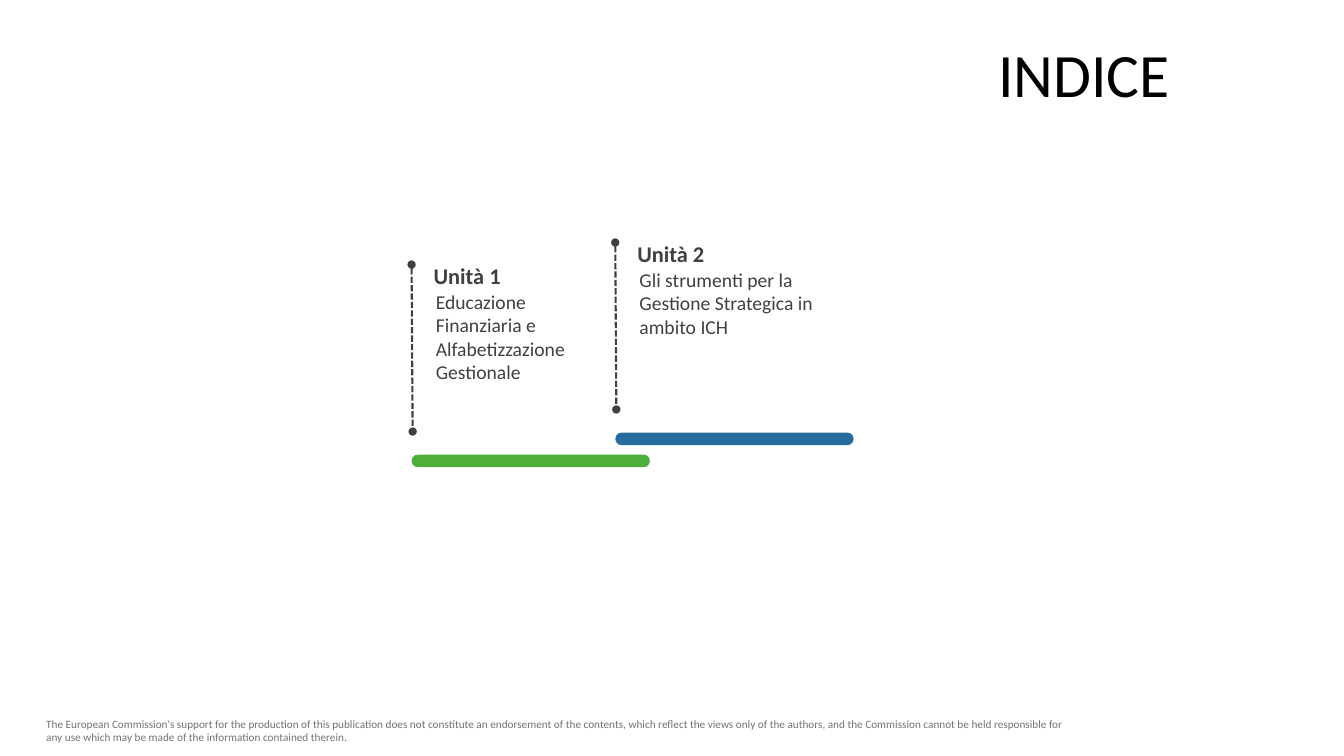
from pptx import Presentation
from pptx.dml.color import RGBColor
from pptx.enum.shapes import MSO_CONNECTOR as CONNECTOR, MSO_SHAPE as SHAPE
from pptx.enum.text import MSO_ANCHOR as ANCHOR, PP_ALIGN as ALIGN
from pptx.oxml.ns import qn
from pptx.util import Emu, Pt
from lxml.etree import SubElement

PX = 9525  # EMU per px, 96 px to the inch
FONT = "Calibri"
DARK = "404040"
UNIT_STEP = (194, -21)  # each unit sits to the right of and above the last

# heading, description, bar colour, description width
UNITS = [
    ("Unità 1", "Educazione Finanziaria e Alfabetizzazione Gestionale", "4EAE3A", 181),
    ("Unità 2", "Gli strumenti per la Gestione Strategica in ambito ICH", "266C9F", 213),
]
DISCLAIMER = (
    "The European Commission's support for the production of this publication "
    "does not constitute an endorsement of the contents, which reflect the views "
    "only of the authors, and the Commission cannot be held responsible for any "
    "use which may be made of the information contained therein."
)


def px(*lengths):
    return [Emu(length * PX) for length in lengths]


def rgb(hex_colour):
    return RGBColor.from_string(hex_colour)


def style(paragraph, size, colour, bold=False):
    for run in paragraph.runs:
        run.font.name = FONT
        run.font.size = Pt(size)
        run.font.bold = bold
        run.font.color.rgb = rgb(colour)


def add_label(slide, text, box, size, colour, bold=False, side_inset=10):
    frame = slide.shapes.add_textbox(*px(*box)).text_frame
    frame.word_wrap = True
    frame.margin_left, frame.margin_right = px(side_inset, side_inset)
    frame.text = text
    style(frame.paragraphs[0], size, colour, bold)


def add_bar(slide, box, colour):
    bar = slide.shapes.add_shape(SHAPE.ROUNDED_RECTANGLE, *px(*box))
    bar.adjustments[0] = 0.5
    bar.shadow.inherit = False
    bar.fill.solid()
    bar.fill.fore_color.rgb = rgb(colour)
    bar.line.fill.background()


def add_dotted_stem(slide, ends):
    stem = slide.shapes.add_connector(CONNECTOR.STRAIGHT, *px(*ends))
    stem.line.width = Pt(1.5)
    stem.line.color.rgb = rgb(DARK)
    properties = stem._element.spPr
    outline = properties.find(qn("a:ln"))
    SubElement(outline, qn("a:prstDash"), val="sysDash")
    for end in ("a:headEnd", "a:tailEnd"):
        SubElement(outline, qn(end), type="oval")
    SubElement(properties, qn("a:effectLst"))


def add_unit(slide, left, top, heading, description, colour, width):
    """Place a unit around its bar, whose top left corner is given."""
    add_bar(slide, (left, top, 227, 12), colour)
    add_label(slide, description, (left + 13, top - 162, width, 78), 14, DARK)
    add_label(slide, heading, (left + 9, top - 188, width, 36), 16, DARK,
              bold=True, side_inset=12)
    add_dotted_stem(slide, (left, top - 181, left + 1, top - 22))


def set_title(slide, text):
    title = slide.shapes.title
    title.left, title.top, title.width, title.height = px(297, 36, 827, 76)
    frame = title.text_frame
    frame.vertical_anchor = ANCHOR.MIDDLE
    frame.text = text
    heading = frame.paragraphs[0]
    heading.alignment = ALIGN.RIGHT
    heading.line_spacing = 0.9
    style(heading, 44, "000000")


def main():
    deck = Presentation()
    deck.slide_width, deck.slide_height = px(1280, 720)
    slide = deck.slides.add_slide(deck.slide_layouts[5])

    # Title and disclaimer
    set_title(slide, "INDICE")
    add_label(slide, DISCLAIMER, (34, 678, 1004, 36), 8, "767171")

    # Units, rising like steps
    for step, unit in enumerate(UNITS):
        left = 392 + step * UNIT_STEP[0]
        top = 433 + step * UNIT_STEP[1]
        add_unit(slide, left, top, *unit)

    deck.save("out.pptx")


if __name__ == "__main__":
    main()
